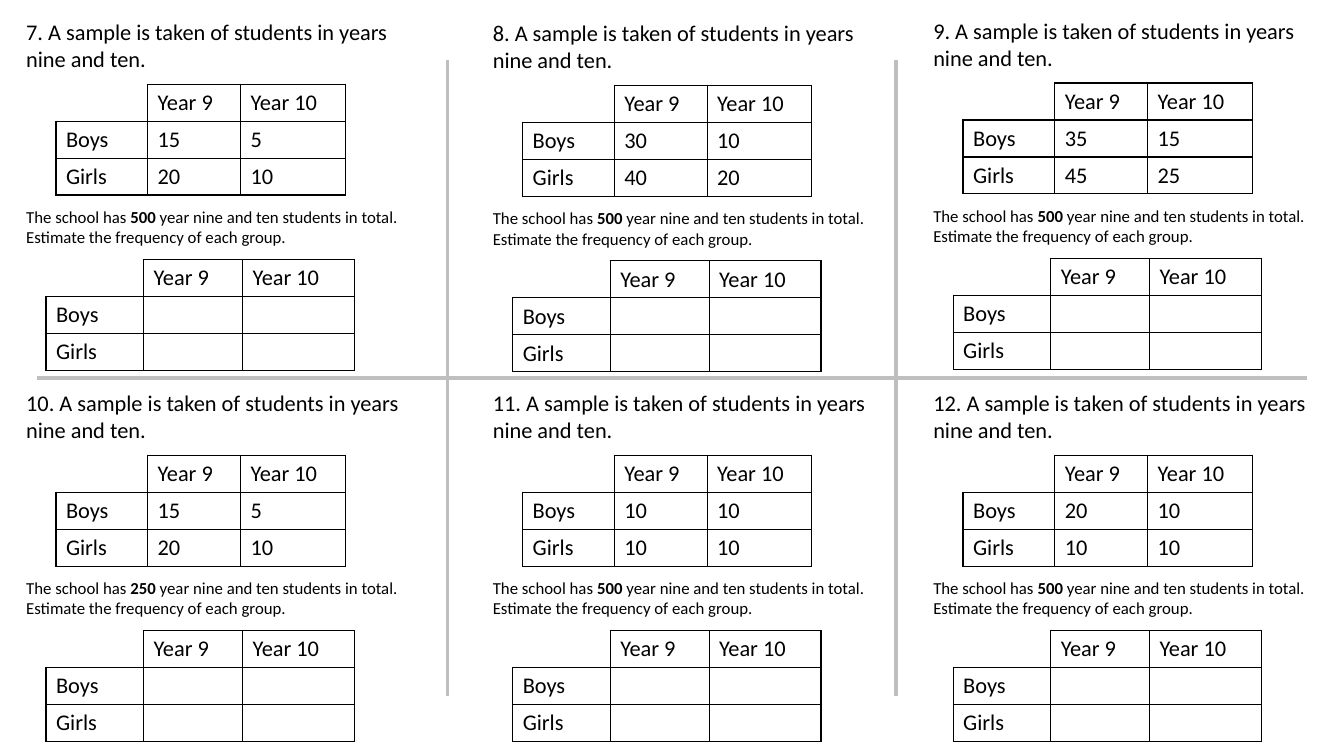
from dataclasses import dataclass

from lxml import etree
from pptx import Presentation
from pptx.dml.color import RGBColor
from pptx.enum.shapes import MSO_CONNECTOR
from pptx.enum.text import MSO_AUTO_SIZE
from pptx.oxml.ns import qn
from pptx.util import Cm, Pt

STRAIGHT = MSO_CONNECTOR.STRAIGHT
GROW = MSO_AUTO_SIZE.SHAPE_TO_FIT_TEXT


@dataclass(frozen=True)
class Theme:
    font: str = "Calibri"
    ink: str = "000000"
    rule: str = "BFBFBF"
    large: int = 16
    small: int = 12
    edge: int = 1
    thick: float = 2.5


THEME = Theme()
ROW = 0.93
SAMPLE = (2.31, 2.34, 2.64)
ANSWER = (2.46, 2.49, 2.82)
BLANK = (("", ""), ("", ""))

# Left edges of the columns; tops of the six boxes, row by row (cm)
LEFTS = (0.41, 12.17, 23.27)
TOPS = ((0.33, 0.36, 0.3), (9.68, 9.68, 9.68))

# School total, then the boys' and girls' counts
TASKS = (
    ("500", ((15, 5), (20, 10))),
    ("500", ((30, 10), (40, 20))),
    ("500", ((35, 15), (45, 25))),
    ("250", ((15, 5), (20, 10))),
    ("500", ((10, 10), (10, 10))),
    ("500", ((20, 10), (10, 10))),
)

# Ends of the dividing lines (cm)
RULES = (
    (0.94, 9.53, 32.94, 9.53),
    (11.28, 1.52, 11.28, 17.53),
    (22.58, 1.52, 22.58, 17.53),
)


def style(para, size):
    para.font.name = THEME.font
    para.font.size = Pt(size)
    para.font.color.rgb = RGBColor.from_string(THEME.ink)


def add_text(slide, x, y, wide, high, size, parts):
    """Place one paragraph; every second part is bold."""
    box = slide.shapes.add_textbox(Cm(x), Cm(y), Cm(wide), Cm(high))
    frame = box.text_frame
    frame.word_wrap = True
    frame.auto_size = GROW
    para = frame.paragraphs[0]
    style(para, size)
    for i, part in enumerate(parts):
        run = para.add_run()
        run.text = part
        if i % 2:
            run.font.bold = True


def set_edges(cell, sides):
    """Draw the named sides of a cell and clear the others."""
    props = cell._tc.get_or_add_tcPr()
    for side in "LRTB":
        line = etree.SubElement(props, qn(f"a:ln{side}"), w=str(Pt(THEME.edge)))
        if side in sides:
            fill = etree.SubElement(line, qn("a:solidFill"))
            etree.SubElement(fill, qn("a:srgbClr"), val=THEME.ink)
        else:
            etree.SubElement(line, qn("a:noFill"))


def add_grid(slide, x, y, widths, counts):
    """Place a two-way table of year against sex."""
    rows = (("", "Year 9", "Year 10"), ("Boys", *counts[0]), ("Girls", *counts[1]))
    frame = slide.shapes.add_table(
        3, 3, Cm(x), Cm(y), Cm(sum(widths)), Cm(ROW * 3))
    table = frame.table
    table.first_row = table.horz_banding = False
    for col, wide in zip(table.columns, widths):
        col.width = Cm(wide)
    for r, row in enumerate(rows):
        table.rows[r].height = Cm(ROW)
        for c, value in enumerate(row):
            cell = table.cell(r, c)
            cell.text = str(value)
            style(cell.text_frame.paragraphs[0], THEME.large)
            set_edges(cell, "LRTB" if r or c else "RB")
            cell.fill.background()


def add_task(slide, x, y, number, total, counts):
    """Place one question with its sample and answer tables."""
    add_text(slide, x, y, 9.93, 1.63, THEME.large,
             [f"{number}. A sample is taken of students in years nine and ten."])
    add_grid(slide, x + 1, y + 1.79, SAMPLE, counts)
    add_text(slide, x, y + 4.76, 10.36, 1.27, THEME.small,
             ["The school has ", total, " year nine and ten students in total. "
              "Estimate the frequency of each group."])
    add_grid(slide, x + 0.75, y + 6.21, ANSWER, BLANK)


def add_rules(slide):
    """Draw the lines that part the six questions."""
    for ends in RULES:
        line = slide.shapes.add_connector(STRAIGHT, *map(Cm, ends))
        line.line.color.rgb = RGBColor.from_string(THEME.rule)
        line.line.width = Pt(THEME.thick)
        etree.SubElement(line._element.spPr, qn("a:effectLst"))


def main():
    deck = Presentation()
    deck.slide_width, deck.slide_height = Cm(33.87), Cm(19.05)
    slide = deck.slides.add_slide(deck.slide_layouts[6])
    add_rules(slide)
    for i, (total, counts) in enumerate(TASKS):
        row, col = divmod(i, len(LEFTS))
        add_task(slide, LEFTS[col], TOPS[row][col], i + 7, total, counts)
    deck.save("out.pptx")


if __name__ == "__main__":
    main()
